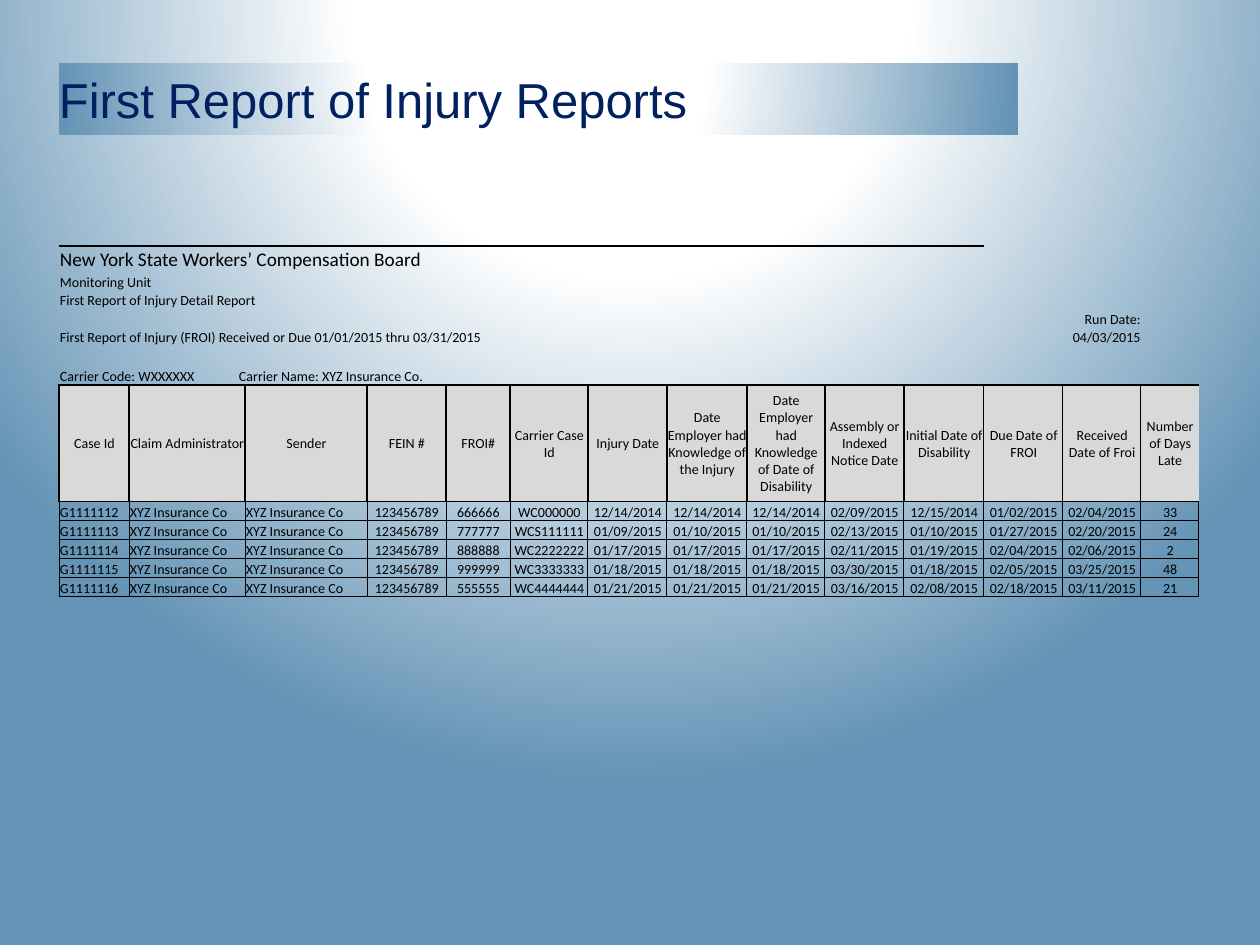
from lxml.etree import SubElement
from pptx import Presentation
from pptx.dml.color import RGBColor
from pptx.enum.text import MSO_ANCHOR as Anchor, PP_ALIGN as Align
from pptx.oxml import parse_xml
from pptx.oxml.ns import nsdecls, qn
from pptx.util import Pt

PX = 914400 // 126
COLORS = {"title": "002060", "ink": "000000", "header": "D9D9D9",
          "light": "FFFFFF", "blue": "6493B5"}
NO_STYLE = "{2D5ABB26-0587-4C30-8999-92F81FD0307C}"
THIN, MEDIUM, THICK = 0.5, 1, 1.5

COLUMN_WIDTHS = [70, 116, 122, 79, 64, 78, 79, 80, 78, 79, 80, 79, 78, 58]
ROW_HEIGHTS = [26, 19, 18, 37, 19, 20, 117] + [19] * 5
CARRIER_ROW, HEADER_ROW = 5, 6
RULE_COLUMNS = 11
CARRIER_TAB = 179

# Report heading: row, column, columns spanned, text, size, anchor, alignment
HEADING = [
    (0, 0, 4, "New York State Workers’ Compensation Board", 11, Anchor.MIDDLE, Align.LEFT),
    (1, 0, 2, "Monitoring Unit", 8, Anchor.BOTTOM, Align.LEFT),
    (2, 0, 3, "First Report of Injury Detail Report", 8, Anchor.MIDDLE, Align.LEFT),
    (3, 0, 5, "First Report of Injury (FROI) Received or Due 01/01/2015 thru 03/31/2015",
     8, Anchor.BOTTOM, Align.LEFT),
    (3, 12, 1, "Run Date: 04/03/2015", 8, Anchor.BOTTOM, Align.RIGHT),
    (CARRIER_ROW, 0, 4, "Carrier Code: WXXXXXX\tCarrier Name: XYZ Insurance Co.",
     8, Anchor.BOTTOM, Align.LEFT),
]
COLUMN_TITLES = [
    "Case Id", "Claim Administrator", "Sender", "FEIN #", "FROI#", "Carrier Case Id",
    "Injury Date", "Date Employer had Knowledge of the Injury",
    "Date Employer had Knowledge of Date of Disability",
    "Assembly or Indexed Notice Date", "Initial Date of Disability",
    "Due Date of FROI", "Received Date of Froi", "Number of Days Late",
]
INSURER, FEIN = "XYZ Insurance Co", "123456789"
# Case, FROI, carrier case, injury, employer knowledge, notice,
# initial disability, due, received, days late
CASES = [
    ("G1111112", "666666", "WC000000", "12/14/2014", "12/14/2014", "02/09/2015",
     "12/15/2014", "01/02/2015", "02/04/2015", "33"),
    ("G1111113", "777777", "WCS111111", "01/09/2015", "01/10/2015", "02/13/2015",
     "01/10/2015", "01/27/2015", "02/20/2015", "24"),
    ("G1111114", "888888", "WC2222222", "01/17/2015", "01/17/2015", "02/11/2015",
     "01/19/2015", "02/04/2015", "02/06/2015", "2"),
    ("G1111115", "999999", "WC3333333", "01/18/2015", "01/18/2015", "03/30/2015",
     "01/18/2015", "02/05/2015", "03/25/2015", "48"),
    ("G1111116", "555555", "WC4444444", "01/21/2015", "01/21/2015", "03/16/2015",
     "02/08/2015", "02/18/2015", "03/11/2015", "21"),
]


def rgb(name):
    return RGBColor.from_string(COLORS[name])


def glow_fill(owner, fill_path):
    """Swap a solid fill for the circular white-to-blue gradient."""
    stops = "".join(
        f'<a:gs pos="{pos * 1000}"><a:srgbClr val="{COLORS[name]}"/></a:gs>'
        for pos, name in ((0, "light"), (35, "light"), (100, "blue")))
    glow = parse_xml(
        f'<a:gradFill {nsdecls("a")} rotWithShape="1"><a:gsLst>{stops}</a:gsLst>'
        '<a:path path="circle"><a:fillToRect l="50000" t="-80000" r="50000" b="180000"/>'
        '</a:path></a:gradFill>')
    solid = owner.xpath(fill_path)[0]
    solid.getparent().replace(solid, glow)


def style_run(run, font, size, color):
    run.font.name = font
    run.font.size = Pt(size)
    run.font.color.rgb = rgb(color)


def set_borders(cell, **widths):
    """Draw the cell edges given as L, R, T, B widths in points."""
    properties = cell._tc.get_or_add_tcPr()
    edges = [edge for edge in "LRTB" if edge in widths]
    for place, edge in enumerate(edges):
        properties.insert(place, parse_xml(
            f'<a:ln{edge} {nsdecls("a")} w="{Pt(widths[edge])}"><a:solidFill>'
            f'<a:srgbClr val="{COLORS["ink"]}"/></a:solidFill></a:ln{edge}>'))


def write_cell(cell, text, size=8, anchor=Anchor.BOTTOM, align=Align.CENTER):
    cell.vertical_anchor = anchor
    paragraph = cell.text_frame.paragraphs[0]
    paragraph.text = text
    paragraph.alignment = align
    for run in paragraph.runs:
        style_run(run, "Calibri", size, "ink")
    return paragraph


def add_title(slide, left, top, width, height):
    title = slide.shapes.add_textbox(left * PX, top * PX, width * PX, height * PX)
    title.fill.solid()
    glow_fill(title.element, "./p:spPr/a:solidFill")
    frame = title.text_frame
    frame.word_wrap = True
    frame.vertical_anchor = Anchor.MIDDLE
    frame.margin_left = 0
    frame.text = "First Report of Injury Reports"
    style_run(frame.paragraphs[0].runs[0], "Arial", 28, "title")


def fill_heading(table):
    for row, column, span, text, size, anchor, align in HEADING:
        cell = table.cell(row, column)
        if span > 1:
            cell.merge(table.cell(row, column + span - 1))
        paragraph = write_cell(cell, text, size, anchor, align)
        if "\t" in text:
            tabs = SubElement(paragraph._p.get_or_add_pPr(), qn("a:tabLst"))
            SubElement(tabs, qn("a:tab"), pos=str(CARRIER_TAB * PX), algn="l")
    for column in range(len(COLUMN_WIDTHS)):
        if column < RULE_COLUMNS:
            set_borders(table.cell(0, column), T=THICK)
        set_borders(table.cell(CARRIER_ROW, column), B=MEDIUM)


def fill_cases(table):
    last = len(COLUMN_TITLES) - 1
    for column, text in enumerate(COLUMN_TITLES):
        cell = table.cell(HEADER_ROW, column)
        write_cell(cell, text, anchor=Anchor.MIDDLE)
        cell.fill.solid()
        cell.fill.fore_color.rgb = rgb("header")
        sides = {"L": MEDIUM} if column == last else {"L": MEDIUM, "R": MEDIUM}
        set_borders(cell, T=MEDIUM, B=THIN, **sides)
    for row, case in enumerate(CASES, HEADER_ROW + 1):
        case_id, froi, carrier_case, injury, known, *rest = case
        values = [case_id, INSURER, INSURER, FEIN, froi, carrier_case,
                  injury, known, known, *rest]
        for column, text in enumerate(values):
            cell = table.cell(row, column)
            write_cell(cell, text, align=Align.LEFT if column < 3 else Align.CENTER)
            set_borders(cell, L=THIN, R=THIN, T=THIN, B=THIN)


def add_report(slide, left, top):
    table = slide.shapes.add_table(
        len(ROW_HEIGHTS), len(COLUMN_WIDTHS), left * PX, top * PX,
        sum(COLUMN_WIDTHS) * PX, sum(ROW_HEIGHTS) * PX).table
    table.first_row = table.horz_banding = False
    table._tbl.tblPr.find(qn("a:tableStyleId")).text = NO_STYLE
    for column, width in zip(table.columns, COLUMN_WIDTHS):
        column.width = width * PX
    for row, height in zip(table.rows, ROW_HEIGHTS):
        row.height = height * PX
    for cell in table.iter_cells():
        cell.margin_left = cell.margin_top = PX
        cell.margin_right = cell.margin_bottom = 0
        cell.fill.background()
        # Small type keeps the empty rows low
        SubElement(cell.text_frame.paragraphs[0]._p, qn("a:endParaRPr"), sz="800")
    fill_heading(table)
    fill_cases(table)


def main():
    deck = Presentation()
    deck.slide_width, deck.slide_height = 1260 * PX, 945 * PX
    slide = deck.slides.add_slide(deck.slide_layouts[6])
    # Background
    slide.background.fill.solid()
    glow_fill(slide.element, ".//p:bgPr/a:solidFill")
    # Title band and report
    add_title(slide, 59, 63, 959, 72)
    add_report(slide, 59, 246)
    deck.save("out.pptx")


if __name__ == "__main__":
    main()
